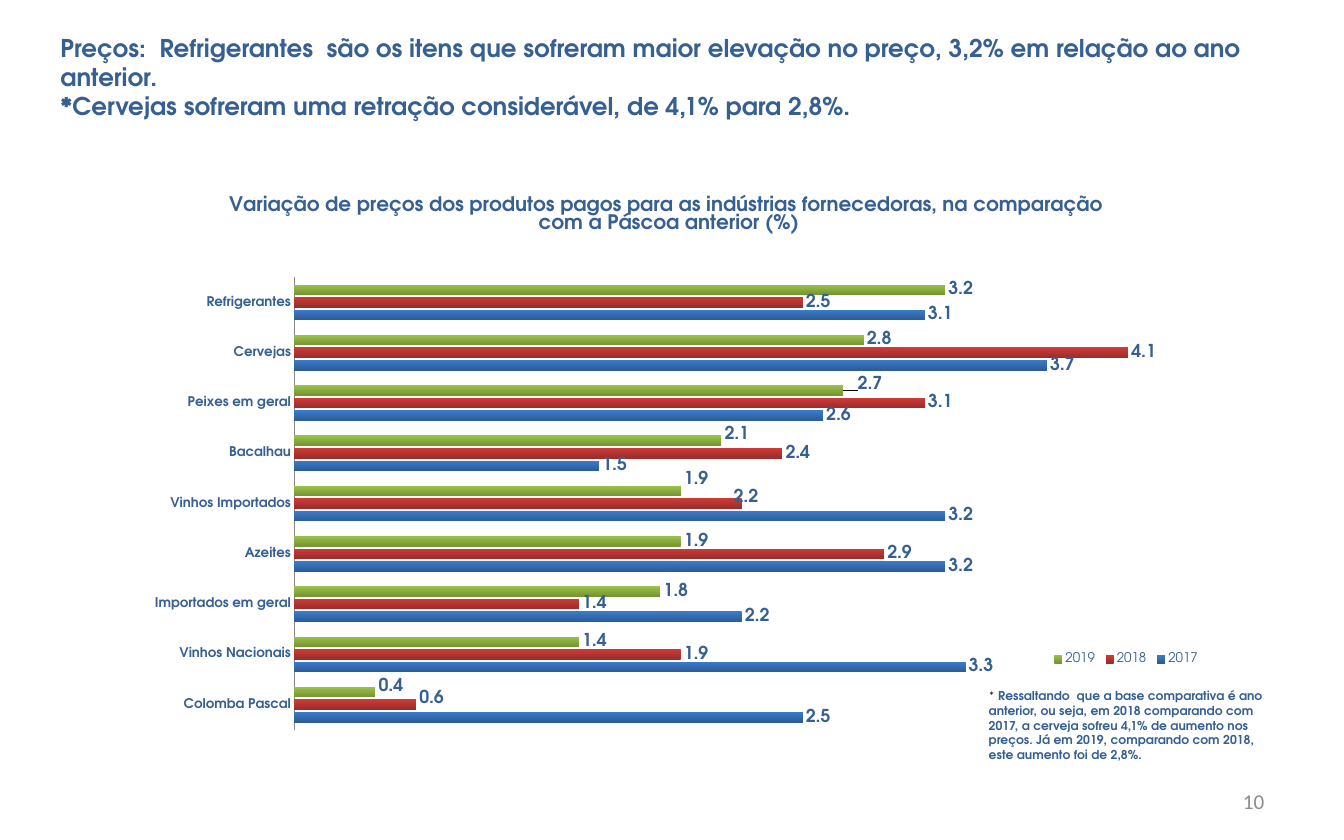
import pptx
import pptx.util
import pptx.chart.data
import pptx.dml.color
import pptx.enum.chart
import pptx.enum.text
import pptx.oxml
import pptx.oxml.ns

Cm = pptx.util.Cm
Pt = pptx.util.Pt
RGB = pptx.dml.color.RGBColor
ALIGN = pptx.enum.text.PP_ALIGN
ANCHOR = pptx.enum.text.MSO_ANCHOR
KIND = pptx.enum.chart

NAVY = RGB(0x37, 0x60, 0x92)
BLACK = RGB(0, 0, 0)
GREY = RGB(0x8C, 0x8C, 0x8C)
AXIS = RGB(0x86, 0x86, 0x86)
FACE = "TeX Gyre Adventor"
PLAIN = "Calibri"

ITEMS = ["Colomba Pascal", "Vinhos Nacionais", "Importados em geral", "Azeites",
         "Vinhos Importados", "Bacalhau", "Peixes em geral", "Cervejas", "Refrigerantes"]
YEARS = [
    ("2017", [2.5, 3.3, 2.2, 3.2, 3.2, 1.5, 2.6, 3.7, 3.1],
     RGB(0x3A, 0x7C, 0xCB), RGB(0x2C, 0x5D, 0x98), {}),
    ("2018", [0.6, 1.9, 1.4, 2.9, 2.2, 2.4, 3.1, 4.1, 2.5],
     RGB(0xCE, 0x3B, 0x37), RGB(0x9B, 0x2D, 0x2A),
     {0: (0, -0.01), 4: (-0.01, -0.01)}),
    ("2019", [0.4, 1.4, 1.8, 1.9, 1.9, 2.1, 2.7, 2.8, 3.2],
     RGB(0x9B, 0xC3, 0x48), RGB(0x76, 0x95, 0x35),
     {0: (0, -0.01), 4: (0, -0.02), 5: (0, -0.01), 6: (0.01, -0.01)}),
]


def style(font, size, color=NAVY, bold=False, face=FACE):
    font.name = face
    font.size = Pt(size)
    font.bold = bold
    font.color.rgb = color


def write(para, text, *look, **more):
    run = para.add_run()
    run.text = text
    style(run.font, *look, **more)


def layout(x, y, w=None, h=None, inner=False):
    tags = [("layoutTarget", "inner")] if inner else []
    if w is not None:
        tags += [("xMode", "edge"), ("yMode", "edge")]
    tags += [("x", x), ("y", y)]
    if w is not None:
        tags += [("w", w), ("h", h)]
    body = "".join(f'<c:{tag} val="{val}"/>' for tag, val in tags)
    return pptx.oxml.parse_xml(
        f'<c:layout {pptx.oxml.ns.nsdecls("c")}><c:manualLayout>{body}'
        '</c:manualLayout></c:layout>')


def place(node, after, part):
    for old in node.xpath("./c:layout"):
        node.remove(old)
    if after is None:
        node.insert(0, part)
    else:
        node.xpath(f"./c:{after}")[0].addnext(part)


def add_title(slide, left, top, width, height):
    shape = slide.shapes.title
    shape.left, shape.top, shape.width, shape.height = left, top, width, height
    frame = shape.text_frame
    frame.auto_size = pptx.enum.text.MSO_AUTO_SIZE.NONE
    frame.word_wrap = True
    frame.vertical_anchor = ANCHOR.TOP
    frame.margin_left = frame.margin_right = Cm(0.4)
    frame.margin_top = Cm(1.7)
    para = frame.paragraphs[0]
    para.alignment = ALIGN.LEFT
    write(para, "Preços:  Refrigerantes  são os itens que sofreram maior elevação "
          "no preço, 3,2% em relação ao ano anterior. ", 22, bold=True)
    para.add_line_break()
    write(para, "*Cervejas sofreram uma retração considerável, de 4,1% para 2,8%.",
          22, bold=True)


def paint(series, light, dark, shifts):
    fill = series.format.fill
    fill.gradient()
    fill.gradient_angle = 270
    for stop, color, spot in zip(fill.gradient_stops, (light, dark), (0, 1)):
        stop.color.rgb = color
        stop.position = spot
    labels = series.data_labels
    labels.show_value = True
    labels.number_format = "0.0"
    labels.number_format_is_linked = False
    labels.position = KIND.XL_LABEL_POSITION.OUTSIDE_END
    style(labels.font, 16, bold=True)
    for index, shift in shifts.items():
        label = series.points[index].data_label
        label.position = KIND.XL_LABEL_POSITION.OUTSIDE_END
        style(label.font, 16, bold=True)
        node = series._element.xpath(f'.//c:dLbl[c:idx/@val="{index}"]')[0]
        place(node, "idx", layout(*shift))


def add_prices(slide, left, top, width, height):
    data = pptx.chart.data.CategoryChartData(number_format="0.0")
    data.categories = ITEMS
    for year, values, *_ in YEARS:
        data.add_series(year, values)
    chart = slide.shapes.add_chart(
        KIND.XL_CHART_TYPE.BAR_CLUSTERED, left, top, width, height, data).chart
    style(chart.font, 10, BLACK, face=PLAIN)

    chart.has_title = True
    para = chart.chart_title.text_frame.paragraphs[0]
    write(para, "Variação de preços dos produtos pagos para as indústrias "
          "fornecedoras, na comparação  com a Páscoa anterior (%)", 18, bold=True)
    chart.chart_title.include_in_layout = False

    plot = chart.plots[0]
    plot.vary_by_categories = False
    plot.gap_width = 150
    plot.overlap = -25
    for series, (_, _, *look) in zip(plot.series, YEARS):
        paint(series, *look)

    axis = chart.category_axis
    axis.major_tick_mark = KIND.XL_TICK_MARK.NONE
    axis.format.line.color.rgb = AXIS
    style(axis.tick_labels.font, 12, bold=True)
    scale = chart.value_axis
    scale.minimum_scale = 0
    scale.maximum_scale = 4.5
    scale.has_major_gridlines = False
    scale.visible = False

    chart.has_legend = True
    legend = chart.legend
    legend.position = KIND.XL_LEGEND_POSITION.TOP
    legend.include_in_layout = False
    style(legend.font, 12)
    place(legend._element, "legendPos", layout(0.84, 0.82, 0.14, 0.05))
    area = chart._chartSpace.xpath(".//c:plotArea")[0]
    place(area, None, layout(0.164, 0.179, 0.821, 0.789, True))


def add_note(slide, left, top, width, height):
    frame = slide.shapes.add_textbox(left, top, width, height).text_frame
    frame.word_wrap = True
    para = frame.paragraphs[0]
    write(para, "*", 11, BLACK, face=PLAIN)
    write(para, " Ressaltando  que a base comparativa é ano anterior, ou seja, em 2018 "
          "comparando com 2017, a cerveja sofreu 4,1% de aumento nos preços. Já em 2019, "
          "comparando com 2018, este aumento foi de 2,8%.", 11, bold=True)


def add_number(slide, left, top, width, height):
    frame = slide.shapes.add_textbox(left, top, width, height).text_frame
    frame.word_wrap = True
    frame.vertical_anchor = ANCHOR.MIDDLE
    frame.margin_left = frame.margin_right = Cm(0.4)
    para = frame.paragraphs[0]
    para.alignment = ALIGN.RIGHT
    write(para, "10", 19, GREY, face=PLAIN)


def main():
    deck = pptx.Presentation()
    deck.slide_width, deck.slide_height = Cm(42.67), Cm(26.67)
    slide = deck.slides.add_slide(deck.slide_layouts[5])
    add_title(slide, Cm(1.52), Cm(-0.66), Cm(40.21), Cm(7))
    add_prices(slide, Cm(3.53), Cm(5.54), Cm(35.41), Cm(18.21))
    add_note(slide, Cm(31.14), Cm(21.74), Cm(9.6), Cm(2.62))
    add_number(slide, Cm(30.58), Cm(24.71), Cm(9.96), Cm(1.42))
    deck.save("out.pptx")


if __name__ == "__main__":
    main()
